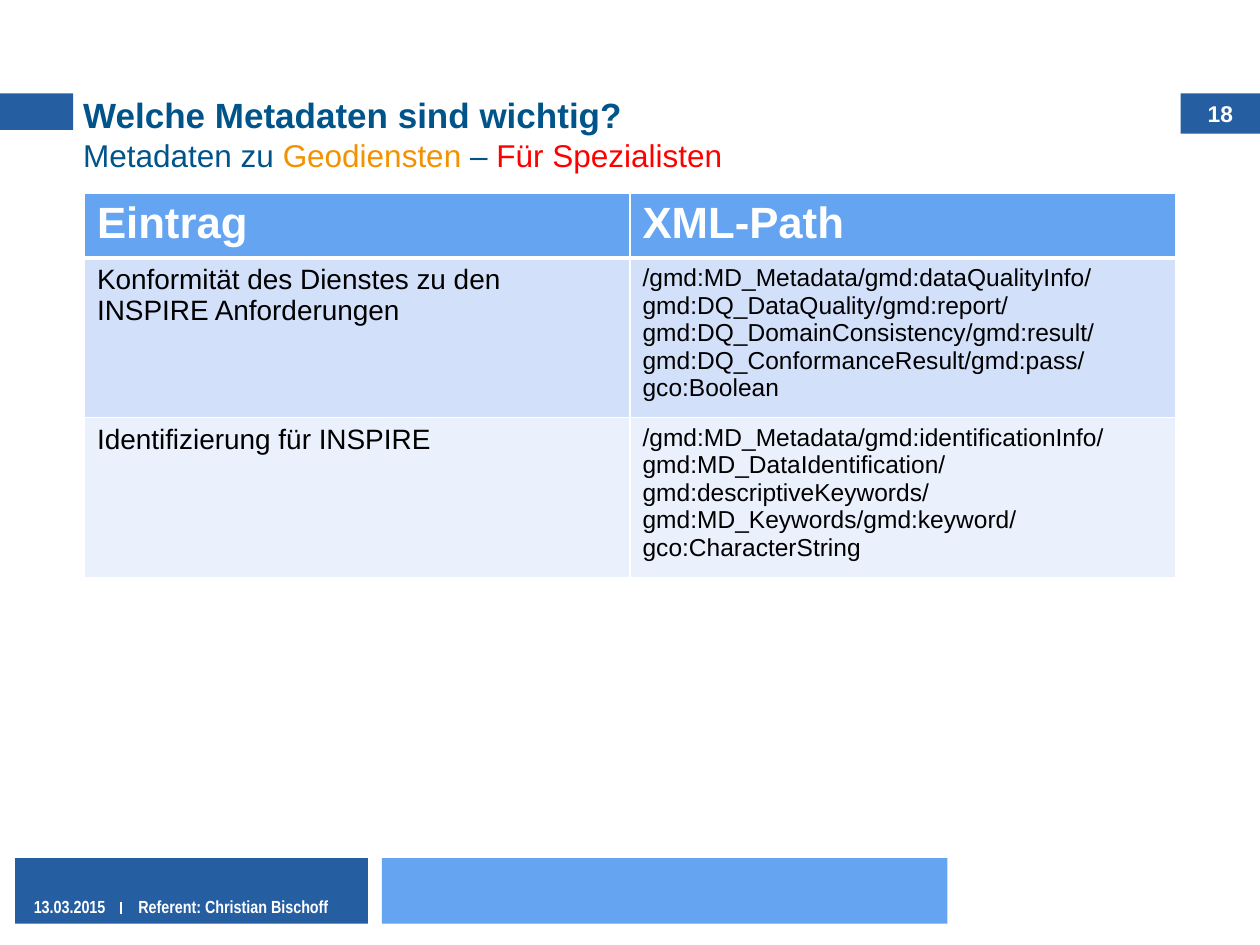
from lxml import etree
from pptx import Presentation
from pptx.dml.color import RGBColor
from pptx.enum.shapes import MSO_CONNECTOR, MSO_SHAPE
from pptx.enum.text import MSO_ANCHOR, PP_ALIGN
from pptx.oxml.ns import qn
from pptx.util import Inches, Pt

RECTANGLE = MSO_SHAPE.RECTANGLE
STRAIGHT = MSO_CONNECTOR.STRAIGHT
MIDDLE = MSO_ANCHOR.MIDDLE
LEFT, CENTER = PP_ALIGN.LEFT, PP_ALIGN.CENTER

WHITE, BLACK = "FFFFFF", "000000"
DARK_BLUE, LIGHT_BLUE, TITLE_BLUE = "265EA2", "65A4F1", "00548A"

TITLE = ("Welche Metadaten sind wichtig?", TITLE_BLUE)
SUBTITLE = [
    ("Metadaten zu ", TITLE_BLUE),
    ("Geodiensten ", "F39200"),
    ("– ", TITLE_BLUE),
    ("Für Spezialisten", "FF0000"),
]
HEADERS = ("Eintrag", "XML-Path")
ENTRIES = [
    ("Konformität des Dienstes zu den INSPIRE Anforderungen",
     "/gmd:MD_Metadata/gmd:dataQualityInfo/gmd:DQ_DataQuality/gmd:report/"
     "gmd:DQ_DomainConsistency/gmd:result/gmd:DQ_ConformanceResult/gmd:pass/"
     "gco:Boolean"),
    ("Identifizierung für INSPIRE",
     "/gmd:MD_Metadata/gmd:identificationInfo/gmd:MD_DataIdentification/"
     "gmd:descriptiveKeywords/gmd:MD_Keywords/gmd:keyword/gco:CharacterString"),
]
ENTRY_FILLS = ("D3E0FA", "EAF0FC")
ENTRY_SIZES = (16, 14)
HEADER_HEIGHT, ENTRY_HEIGHT, COLUMN_WIDTH = 0.48, 1.19, 4.33
PANELS = [
    (3.03, 6.81, 4.49, 0.52, LIGHT_BLUE),
    (0.12, 6.81, 2.8, 0.52, DARK_BLUE),
    (0, 0.74, 0.58, 0.29, DARK_BLUE),
]
PAGE_NUMBER = ("18", (9.37, 0.74, 0.63, 0.32, DARK_BLUE))
FOOTERS = [
    ("13.03.2015", 0.17, 2),
    ("Referent: Christian Bischoff", 1, 1.8),
]


def color(value):
    return RGBColor.from_string(value)


def add_run(para, text, size, value, bold=False, font="Arial"):
    run = para.add_run()
    run.text = text
    run.font.name, run.font.size, run.font.bold = font, Pt(size), bold
    run.font.color.rgb = color(value)


def add_panel(page, left, top, width, height, fill):
    panel = page.shapes.add_shape(
        RECTANGLE, Inches(left), Inches(top), Inches(width), Inches(height))
    panel.shadow.inherit = False
    panel.fill.solid()
    panel.fill.fore_color.rgb = color(fill)
    panel.line.fill.background()
    return panel


def add_border(cell, side, width):
    line = etree.SubElement(
        cell._tc.get_or_add_tcPr(), qn("a:ln" + side), w=str(Pt(width)))
    fill = etree.SubElement(line, qn("a:solidFill"))
    etree.SubElement(fill, qn("a:srgbClr"), val=WHITE)


def fill_cell(cell, text, size, value, fill, bold, widths):
    """Write one cell; widths are its left, right, top and bottom borders."""
    for side, width in zip("LRTB", widths):
        add_border(cell, side, width)
    cell.fill.solid()
    cell.fill.fore_color.rgb = color(fill)
    para = cell.text_frame.paragraphs[0]
    para.alignment = LEFT
    add_run(para, text, size, value, bold)


def add_title(page):
    title = page.shapes.title
    title.left, title.top = Inches(0.56), Inches(0.66)
    title.width, title.height = Inches(8.83), Inches(0.8)
    title.text_frame.vertical_anchor = MIDDLE
    para = title.text_frame.paragraphs[0]
    para.alignment = LEFT
    add_run(para, TITLE[0], 20, TITLE[1], bold=True)
    para.add_line_break()
    for text, value in SUBTITLE:
        add_run(para, text, 18, value)


def add_metadata_table(page):
    height = HEADER_HEIGHT + ENTRY_HEIGHT * len(ENTRIES)
    table = page.shapes.add_table(
        len(ENTRIES) + 1, len(HEADERS), Inches(0.67), Inches(1.53),
        Inches(COLUMN_WIDTH * len(HEADERS)), Inches(height)).table
    table.rows[0].height = Inches(HEADER_HEIGHT)
    for column, text in enumerate(HEADERS):
        fill_cell(table.cell(0, column), text, 25, WHITE, LIGHT_BLUE, True,
                  (1, 1, 1, 3))
    for row, (entry, fill) in enumerate(zip(ENTRIES, ENTRY_FILLS), 1):
        table.rows[row].height = Inches(ENTRY_HEIGHT)
        top = 3 if row == 1 else 1
        for column, (text, size) in enumerate(zip(entry, ENTRY_SIZES)):
            fill_cell(table.cell(row, column), text, size, BLACK, fill, False,
                      (1, 1, top, 1))


def add_footer(page):
    for text, left, width in FOOTERS:
        box = page.shapes.add_textbox(
            Inches(left), Inches(7.06), Inches(width), Inches(0.27))
        box.text_frame.word_wrap = True
        box.text_frame.vertical_anchor = MIDDLE
        add_run(box.text_frame.paragraphs[0], text, 10, WHITE, True,
                "Arial Narrow")
    divider = page.shapes.add_connector(
        STRAIGHT, Inches(0.96), Inches(7.16), Inches(0.96), Inches(7.25))
    divider.line.color.rgb = color(WHITE)
    divider.line.width = Pt(1)
    etree.SubElement(divider._element.spPr, qn("a:effectLst"))


def main():
    deck = Presentation()
    deck.slide_width, deck.slide_height = Inches(10), Inches(7.5)
    page = deck.slides.add_slide(deck.slide_layouts[5])
    for panel in PANELS:
        add_panel(page, *panel)
    number, place = PAGE_NUMBER
    frame = add_panel(page, *place).text_frame
    frame.vertical_anchor = MIDDLE
    frame.paragraphs[0].alignment = CENTER
    add_run(frame.paragraphs[0], number, 13, WHITE, bold=True)
    add_footer(page)
    add_title(page)
    add_metadata_table(page)
    deck.save("out.pptx")


if __name__ == "__main__":
    main()
